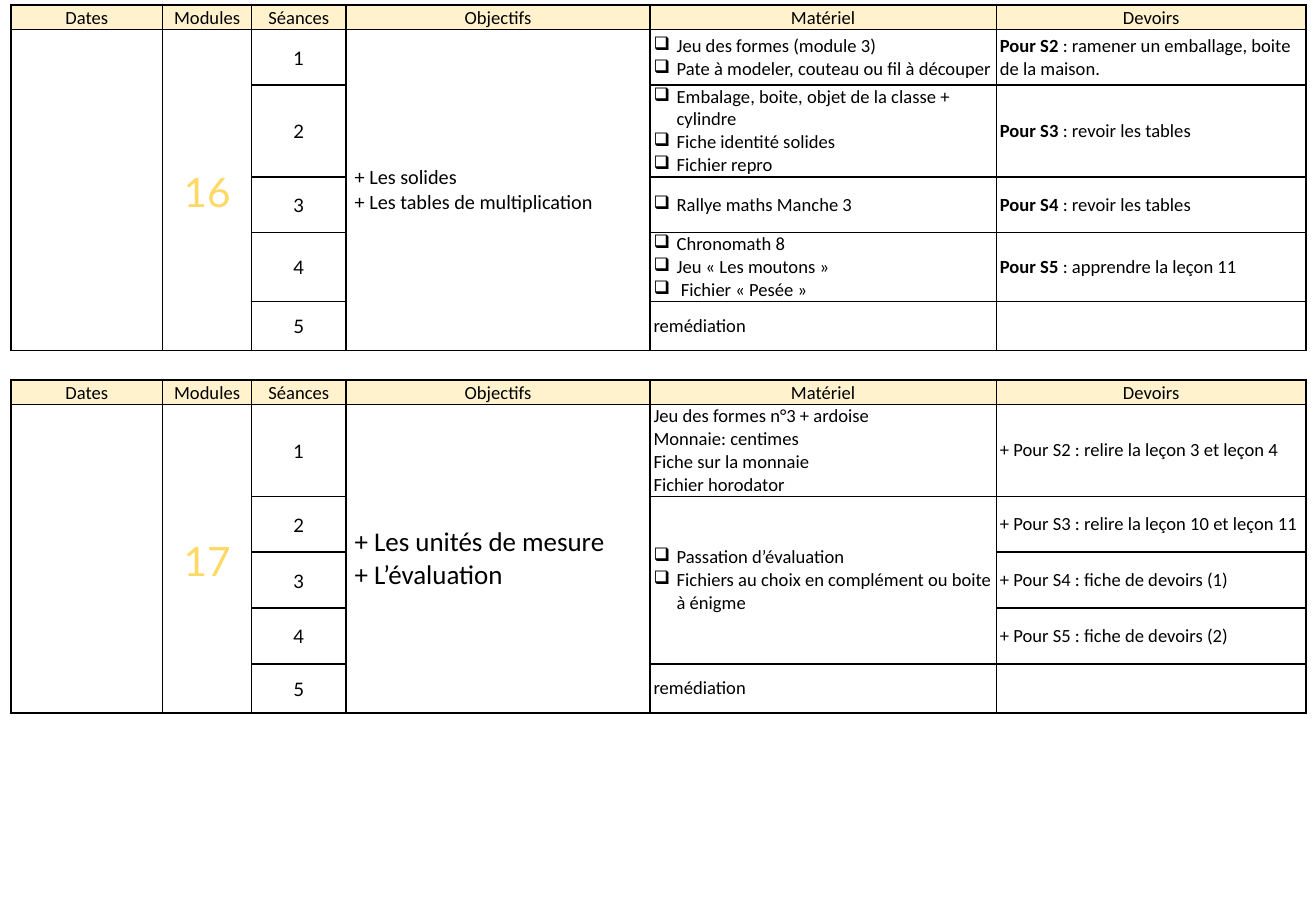
from dataclasses import dataclass

from lxml.etree import SubElement
from pptx import Presentation
from pptx.dml.color import RGBColor
from pptx.enum.text import MSO_ANCHOR, PP_ALIGN
from pptx.oxml.ns import qn
from pptx.util import Inches, Pt


@dataclass(frozen=True)
class Theme:
    text: str = "000000"
    border: str = "000000"
    header_fill: str = "FFF2CC"
    session_fill: str = "FFFFFF"
    module: str = "FFD966"
    body_font: str = "Calibri"
    number_font: str = "Lato"
    body_size: int = 11
    module_size: int = 24
    border_width: int = 1
    check_box: str = "❑"


@dataclass(frozen=True)
class Module:
    number: int
    objectives: tuple
    objective_size: int
    materials: dict  # session number -> lines
    homework: tuple  # (bold part, plain part) for each session
    homework_align: PP_ALIGN
    shared_material: tuple = ()  # first and last session sharing one cell


HEADERS = ("Dates", "Modules", "Séances", "Objectifs", "Matériel", "Devoirs")
DATES, MODULE, SESSION, OBJECTIVES, MATERIAL, HOMEWORK = range(6)
SESSIONS = 5

# Percentages of the slide's width and height
COLUMNS = (11.54, 6.74, 7.2, 23.08, 26.32, 23.55)
ROWS = (2,) + (6.13,) * (SESSIONS - 1) + (5.33,)
LEFT = 0.83

MODULE_16 = Module(
    number=16,
    objectives=("+ Les solides", "+ Les tables de multiplication"),
    objective_size=12,
    materials={
        1: ("❑Jeu des formes (module 3)", "❑Pate à modeler, couteau ou fil à découper"),
        2: ("❑Embalage, boite, objet de la classe + cylindre",
            "❑Fiche identité solides", "❑Fichier repro"),
        3: ("❑Rallye maths Manche 3",),
        4: ("❑Chronomath 8", "❑Jeu « Les moutons »", "❑ Fichier « Pesée »"),
        5: ("remédiation",),
    },
    homework=(
        ("Pour S2", " : ramener un emballage, boite de la maison."),
        ("Pour S3", " : revoir les tables"),
        ("Pour S4", " : revoir les tables"),
        ("Pour S5", " : apprendre la leçon 11"),
    ),
    homework_align=PP_ALIGN.LEFT,
)
MODULE_17 = Module(
    number=17,
    objectives=("+ Les unités de mesure", "+ L’évaluation"),
    objective_size=16,
    materials={
        1: ("Jeu des formes n°3 + ardoise", "Monnaie: centimes",
            "Fiche sur la monnaie", "Fichier horodator"),
        2: ("❑Passation d’évaluation",
            "❑Fichiers au choix en complément ou boite à énigme"),
        5: ("remédiation",),
    },
    homework=(
        ("", "+ Pour S2 : relire la leçon 3 et leçon 4"),
        ("", "+ Pour S3 : relire la leçon 10 et leçon 11"),
        ("", "+ Pour S4 : fiche de devoirs (1)"),
        ("", "+ Pour S5 : fiche de devoirs (2)"),
    ),
    homework_align=PP_ALIGN.JUSTIFY,
    shared_material=(2, 4),
)


class Planner:
    def __init__(self, prs, theme):
        self.theme = theme
        self.width, self.height = prs.slide_width, prs.slide_height
        self.slide = prs.slides.add_slide(prs.slide_layouts[6])

    def x(self, percent):
        return round(self.width * percent / 100)

    def y(self, percent):
        return round(self.height * percent / 100)

    def grid(self, top):
        """Add an empty bordered table whose top is a share of the slide's height."""
        table = self.slide.shapes.add_table(
            len(ROWS), len(COLUMNS), self.x(LEFT), self.y(top),
            self.x(sum(COLUMNS)), self.y(sum(ROWS))).table
        table.first_row = table.horz_banding = False
        for column, share in zip(table.columns, COLUMNS):
            column.width = self.x(share)
        for row, share in zip(table.rows, ROWS):
            row.height = self.y(share)
        for cell in table.iter_cells():
            cell.fill.background()
            self.border(cell)
        return table

    def border(self, cell):
        properties = cell._tc.get_or_add_tcPr()
        for position, side in enumerate(("a:lnL", "a:lnR", "a:lnT", "a:lnB")):
            line = properties.makeelement(
                qn(side), {"w": str(Pt(self.theme.border_width))})
            fill = SubElement(line, qn("a:solidFill"))
            SubElement(fill, qn("a:srgbClr"), val=self.theme.border)
            properties.insert(position, line)

    def bullet(self, paragraph):
        properties = paragraph._p.get_or_add_pPr()
        indent = Inches(0.19)
        properties.set("marL", str(indent))
        properties.set("indent", str(-indent))
        SubElement(properties, qn("a:buChar"), char=self.theme.check_box)

    def fill_cell(self, cell, lines, size=None, font=None, color=None, fill=None,
                  align=PP_ALIGN.LEFT, before=0, spacing=None, margin=0.03):
        """Fill a cell; a line is a string or a (bold part, plain part) pair."""
        theme = self.theme
        cell.vertical_anchor = MSO_ANCHOR.MIDDLE
        cell.margin_left = cell.margin_right = Inches(margin)
        cell.margin_top = cell.margin_bottom = 0
        if fill:
            cell.fill.solid()
            cell.fill.fore_color.rgb = RGBColor.from_string(fill)
        frame = cell.text_frame
        for index, line in enumerate(lines):
            paragraph = frame.add_paragraph() if index else frame.paragraphs[0]
            paragraph.alignment = align
            paragraph.space_before = Pt(before)
            if spacing:
                paragraph.line_spacing = spacing
            strong, plain = ("", line) if isinstance(line, str) else line
            if plain.startswith(theme.check_box):
                self.bullet(paragraph)
                plain = plain[len(theme.check_box):]
            if strong:
                run = paragraph.add_run()
                run.text = strong
                run.font.bold = True
            paragraph.add_run().text = plain
            paragraph.font.size = Pt(size or theme.body_size)
            paragraph.font.name = font or theme.body_font
            paragraph.font.color.rgb = RGBColor.from_string(color or theme.text)

    def module_table(self, module, top):
        theme, table = self.theme, self.grid(top)
        centred = dict(align=PP_ALIGN.CENTER, before=14, spacing=1.07)
        for column, header in enumerate(HEADERS):
            self.fill_cell(table.cell(0, column), [header],
                           fill=theme.header_fill, **centred)
        for column in (DATES, MODULE, OBJECTIVES):
            table.cell(1, column).merge(table.cell(SESSIONS, column))
        if module.shared_material:
            first, last = module.shared_material
            table.cell(first, MATERIAL).merge(table.cell(last, MATERIAL))

        self.fill_cell(table.cell(1, MODULE), [str(module.number)],
                       size=theme.module_size, font=theme.number_font,
                       color=theme.module, **centred)
        self.fill_cell(table.cell(1, OBJECTIVES), module.objectives,
                       size=module.objective_size, margin=0.07)
        for session in range(1, SESSIONS + 1):
            self.fill_cell(table.cell(session, SESSION), [str(session)],
                           font=theme.number_font, fill=theme.session_fill, **centred)
        for session, lines in module.materials.items():
            self.fill_cell(table.cell(session, MATERIAL), lines)
        for session, task in enumerate(module.homework, start=1):
            self.fill_cell(table.cell(session, HOMEWORK), [task],
                           align=module.homework_align, before=3)


def main():
    prs = Presentation()
    prs.slide_width, prs.slide_height = Inches(10.83), Inches(7.5)
    planner = Planner(prs, Theme())
    for module, top in ((MODULE_16, 0.53), (MODULE_17, 41.73)):
        planner.module_table(module, top)
    prs.save("out.pptx")


if __name__ == "__main__":
    main()
